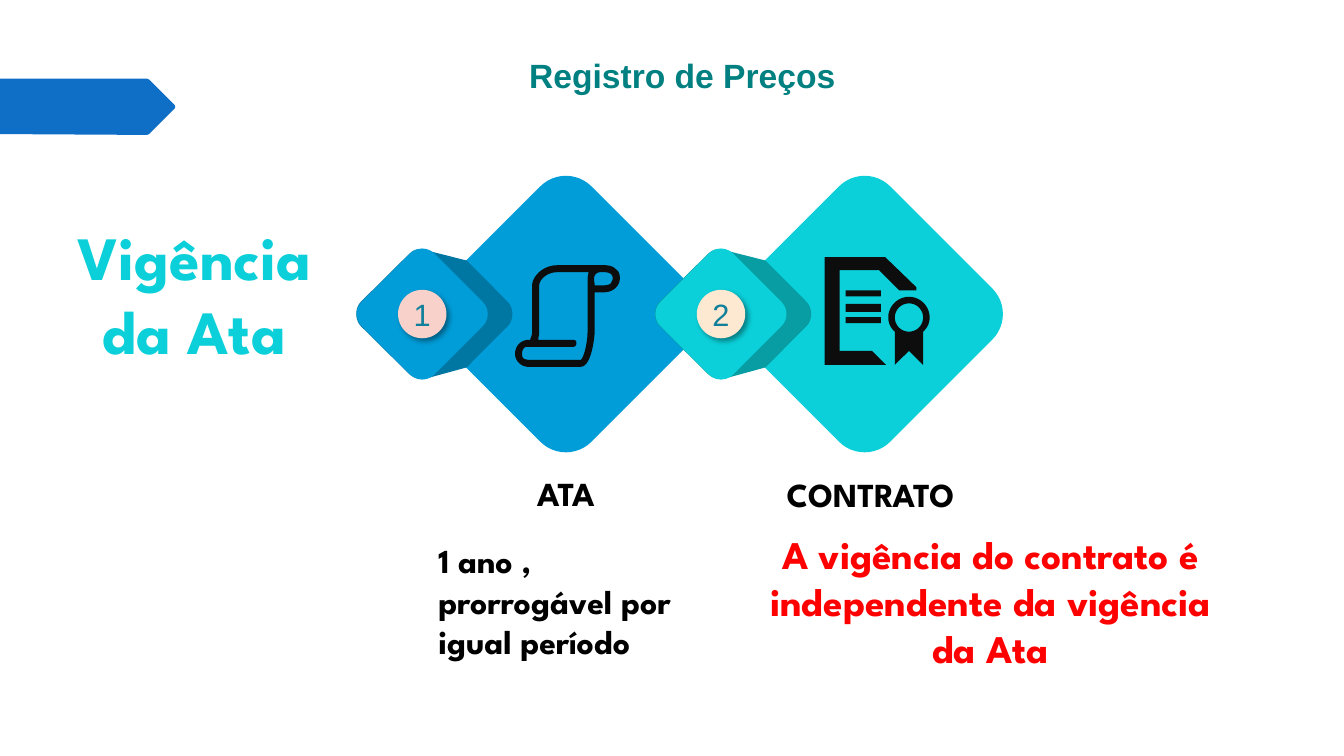
from dataclasses import dataclass

from lxml import etree
from pptx import Presentation
from pptx.dml.color import RGBColor
from pptx.enum.shapes import MSO_SHAPE as Shape
from pptx.enum.text import MSO_ANCHOR as Anchor, MSO_AUTO_SIZE as AutoSize, PP_ALIGN as Align
from pptx.oxml.ns import qn
from pptx.util import Pt


@dataclass(frozen=True)
class Theme:
    title_font: str = "Arial"
    body_font: str = "League Spartan"
    banner: str = "0F6FC6"
    blue: str = "009DD9"
    blue_fold: str = "0076A3"
    aqua: str = "0BD0D9"
    aqua_fold: str = "089CA3"
    pink: str = "F9D1CB"
    cream: str = "FDE9D2"
    digit: str = "10809A"
    title: str = "008080"
    ink: str = "0D0D0D"
    black: str = "000000"
    red: str = "FF0000"
    number_size: int = 22
    text_size: int = 24
    note_size: int = 28
    heading_size: int = 44


T = Theme()

BANNER = [[(0, 0), (105, 0), (106.6, 0.7), (124.6, 18.7), (125.3, 19.4, 125.3, 20.8, 124.6, 21.6),
           (106.6, 39.6), (105, 40.2), (0, 39.6)]]

FOLD = [[(-0.7, -46.4), (31.7, -38.2), (61.2, -8.6), (65.5, -4, 65.5, 4, 61.2, 8.6),
         (31.7, 38.2), (4.3, 45.7), (0, 47.2, -5.8, 46.4, -9.4, 42.8),
         (-43.9, 8.6), (-48.2, 4, -48.2, -4, -43.9, -8.6),
         (-9.4, -42.8), (-6.5, -45.7, -3.6, -46.4, -0.7, -46.4)]]

SCROLL = [
    [(72, 2.9), (70.6, 1.4, 68.4, 0, 63.4, 0), (30.2, 0), (19.4, 0, 12.2, 8.6, 12.2, 14.4),
     (12.2, 48.2), (12.2, 49.7, 11.5, 51.1, 10.8, 53.3), (10.1, 53.3),
     (3.6, 53.3, 0, 58.3, 0, 63.4), (0, 67.7, 3.6, 72.7, 10.1, 72.7), (46.8, 72.7),
     (55.4, 72.7, 56.9, 48.2, 56.9, 48.2), (56.9, 19.4), (63.4, 19.4),
     (70.6, 19.4, 74.9, 14.4, 74.9, 9.4), (74.9, 6.5, 74.2, 4.3, 72, 2.9)],
    [(51.8, 13), (51.8, 48.2), (51.8, 55.4, 49, 67, 46.8, 67.7), (10.1, 67.7),
     (8.6, 67.7, 7.2, 67, 6.5, 67), (5, 65.5, 5, 64.8, 5, 63.4),
     (5, 61.2, 5.8, 59, 7.9, 58.3), (41.8, 58.3), (43.2, 58.3, 43.9, 56.9, 43.9, 55.4),
     (43.9, 54.7, 43.2, 53.3, 41.8, 53.3), (16.6, 53.3), (16.6, 51.8, 17.3, 49.7, 17.3, 48.2),
     (17.3, 14.4), (17.3, 10.8, 22.3, 5, 30.2, 5), (52.6, 5), (51.8, 7.9, 51.8, 10.8, 51.8, 13)],
    [(68.4, 13), (67.7, 13.7, 66.2, 14.4, 63.4, 14.4), (56.9, 14.4), (56.9, 13),
     (56.2, 10.8, 56.2, 7.9, 57.6, 6.5), (59, 5, 60.5, 5, 62.6, 5), (63.4, 5),
     (67.7, 5, 69.8, 6.5, 69.8, 9.4), (69.8, 10.8, 69.1, 11.5, 68.4, 13)],
]

PAPER = [[(33.8, 67), (10.8, 67), (10.8, 9.4), (38.9, 9.4), (53.3, 23.8), (65.5, 23.8),
          (65.5, 21.6), (43.2, 0), (0, 0), (0, 77), (43.9, 77)]]

MEDAL = [
    [(0, -14.8), (-8.1, -14.8, -14.8, -8.1, -14.8, 0), (-14.8, 4, -13, 7.6, -10.1, 10.1),
     (-10.1, 33.8), (0, 23.8), (10.1, 33.8), (10.1, 10.1),
     (13, 7.6, 14.8, 4, 14.8, 0), (14.8, -8.1, 8.1, -14.8, 0, -14.8)],
    [(0, 10.1), (-5.6, 10.1, -10.1, 5.6, -10.1, 0), (-10.1, -5.6, -5.6, -10.1, 0, -10.1),
     (5.6, -10.1, 10.1, -5.6, 10.1, 0), (10.1, 5.6, 5.6, 10.1, 0, 10.1)],
]


def paint(sp, color):
    sp.shadow.inherit = False
    sp.fill.solid()
    sp.fill.fore_color.rgb = RGBColor.from_string(color)
    sp.line.fill.background()
    return sp


def flatten(contour, steps=10):
    points = [contour[0]]
    for seg in contour[1:]:
        if len(seg) == 2:
            points.append(seg)
            continue
        a, b, c, d = points[-1], seg[:2], seg[2:4], seg[4:]
        for i in range(1, steps + 1):
            t = i / steps
            u = 1 - t
            points.append(tuple(u**3 * a[k] + 3 * u * u * t * b[k] + 3 * u * t * t * c[k] + t**3 * d[k]
                                for k in (0, 1)))
    return points


def add_outline(s, x, y, contours, color):
    builder = None
    for contour in contours:
        points = [(Pt(x + px), Pt(y + py)) for px, py in flatten(contour)]
        if builder is None:
            builder = s.shapes.build_freeform(*points[0])
        else:
            builder.move_to(*points[0])
        builder.add_line_segments(points[1:], close=True)
    return paint(builder.convert_to_shape(), color)


def add_centred(s, kind, cx, cy, size, color):
    sp = s.shapes.add_shape(kind, Pt(cx - size / 2), Pt(cy - size / 2), Pt(size), Pt(size))
    return paint(sp, color)


def style(p, font, size, color, bold=True):
    f = p.runs[0].font
    f.name, f.size, f.bold = font, Pt(size), bold
    f.color.rgb = RGBColor.from_string(color)


def add_text(s, box, text, size, color, font=T.body_font, align=Align.CENTER,
             anchor=Anchor.TOP, side=7.2, fit=AutoSize.SHAPE_TO_FIT_TEXT):
    tf = s.shapes.add_textbox(*map(Pt, box)).text_frame
    tf.word_wrap, tf.auto_size, tf.vertical_anchor = True, fit, anchor
    tf.margin_left = tf.margin_right = Pt(side)
    p = tf.paragraphs[0]
    p.text, p.alignment = text, align
    style(p, font, size, color)


def add_badge(s, cx, cy, number, color):
    sp = add_centred(s, Shape.OVAL, cx, cy, 34.6, color)
    effects = sp._element.spPr.find(qn("a:effectLst"))
    shadow = etree.SubElement(effects, qn("a:outerShdw"), blurRad=str(Pt(4)), dist=str(Pt(3)),
                              dir="2700000", algn="tl", rotWithShape="0")
    black = etree.SubElement(shadow, qn("a:srgbClr"), val=T.black)
    etree.SubElement(black, qn("a:alpha"), val="40000")
    tf = sp.text_frame
    tf.margin_left = tf.margin_right = tf.margin_top = tf.margin_bottom = 0
    tf.vertical_anchor = Anchor.MIDDLE
    p = tf.paragraphs[0]
    p.text, p.alignment = number, Align.CENTER
    style(p, T.title_font, T.number_size, T.digit, bold=False)


def add_step(s, cx, cy, number, color, fold, badge):
    add_centred(s, Shape.ROUNDED_RECTANGLE, cx + 102.6, cy, 154.8, color).rotation = 315
    add_outline(s, cx, cy, FOLD, fold)
    add_centred(s, Shape.ROUNDED_RECTANGLE, cx, cy, 73.4, color).rotation = 315
    add_badge(s, cx, cy, number, badge)


def add_certificate(s, x, y):
    add_outline(s, x + 60.3, y + 43.2, MEDAL, T.ink)
    add_outline(s, x, y, PAPER, T.ink)
    for i, height in enumerate((4.3, 5.8, 4.3)):
        paint(s.shapes.add_shape(Shape.RECTANGLE, Pt(x + 15.1), Pt(y + 23.8 + 9.6 * i),
                                 Pt(25.2), Pt(height)), T.ink)


def add_label(s, x, y, text):
    add_text(s, (x, y, 166.3, 36), text, T.text_size, T.black, anchor=Anchor.BOTTOM, side=0)


def build_validity_slide(prs):
    s = prs.slides.add_slide(prs.slide_layouts[6])
    add_outline(s, 0, 56.2, BANNER, T.banner)
    steps = (("1", T.blue, T.blue_fold, T.pink), ("2", T.aqua, T.aqua_fold, T.cream))
    for i, step in enumerate(steps):
        add_step(s, 301.6 + 213.4 * i, 224.3, *step)
    add_label(s, 321.1, 334.1, "ATA")
    add_label(s, 538.6, 334.8, "CONTRATO")
    add_text(s, (73.4, 36, 828, 104.4), "Registro de Preços", T.text_size, T.title,
             font=T.title_font, fit=AutoSize.NONE)
    add_certificate(s, 589, 183.6)
    add_outline(s, 367.9, 189.4, SCROLL, T.ink)
    add_text(s, (306, 382.3, 208.1, 65.5), "1 ano , prorrogável por igual período",
             T.text_size, T.black, align=Align.LEFT)
    add_text(s, (538.6, 375.1, 337.7, 108.7),
             "A vigência do contrato é independente da vigência da Ata", T.note_size, T.red)
    add_text(s, (27.4, 152.6, 222.5, 113.8), "Vigência da Ata", T.heading_size, T.aqua)


def main():
    prs = Presentation()
    prs.slide_width, prs.slide_height = Pt(960), Pt(540)
    build_validity_slide(prs)
    prs.save("out.pptx")


if __name__ == "__main__":
    main()
